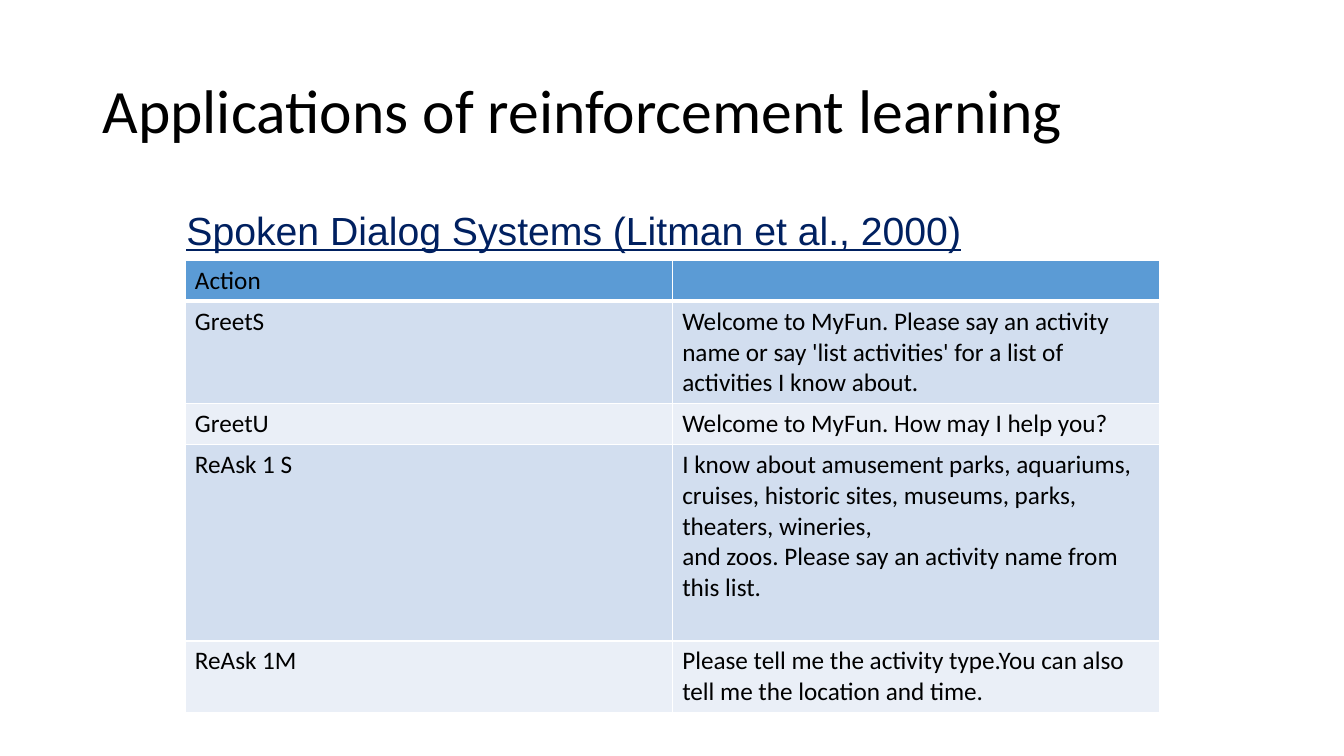
from dataclasses import dataclass

from lxml import etree
from pptx import Presentation
from pptx.dml.color import RGBColor
from pptx.enum.text import MSO_ANCHOR, MSO_AUTO_SIZE, PP_ALIGN
from pptx.oxml.ns import qn
from pptx.util import Cm, Pt

LEFT = PP_ALIGN.LEFT
MIDDLE = MSO_ANCHOR.MIDDLE
NO_FIT = MSO_AUTO_SIZE.NONE
GROW = MSO_AUTO_SIZE.SHAPE_TO_FIT_TEXT
TITLE_ONLY = 5


@dataclass(frozen=True)
class Theme:
    ink: str = "000000"
    navy: str = "002060"
    border: str = "FFFFFF"
    header: str = "5B9BD5"
    bands: tuple = ("D2DEEF", "EAEFF7")
    body_font: str = "Calibri"
    heading_font: str = "Arial"
    title_size: int = 44
    heading_size: int = 28
    body_size: int = 18


THEME = Theme()

ACTIONS = [
    ("Action", "", 1.03),
    ("GreetS", "Welcome to MyFun. Please say an activity name or say "
               "'list activities' for a list of activities I know about.", 2.57),
    ("GreetU", "Welcome to MyFun. How may I help you?", 1.03),
    ("ReAsk 1 S", "I know about amusement parks, aquariums, cruises, historic sites, "
                  "museums, parks, theaters, wineries,\n"
                  "and zoos. Please say an activity name from this list.", 4.95),
    ("ReAsk 1M", "Please tell me the activity type.You can also tell me "
                 "the location and time.", 1.79),
]


def write_text(tf, text, size=THEME.body_size, font=THEME.body_font,
               color=THEME.ink, underline=None, spacing=None):
    for i, line in enumerate(text.split("\n")):
        p = tf.add_paragraph() if i else tf.paragraphs[0]
        p.alignment = LEFT
        p.line_spacing = spacing
        if not line:
            continue
        r = p.add_run()
        r.text = line
        r.font.size = Pt(size)
        r.font.name = font
        r.font.bold = False
        r.font.underline = underline
        r.font.color.rgb = RGBColor.from_string(color)


def add_title(slide, text):
    sp = slide.shapes.title
    sp.left, sp.top, sp.width, sp.height = Cm(2.33), Cm(1.01), Cm(29.21), Cm(3.68)
    tf = sp.text_frame
    tf.vertical_anchor = MIDDLE
    tf.auto_size = NO_FIT
    write_text(tf, text, size=THEME.title_size, spacing=0.9)


def add_heading(slide, text):
    sp = slide.shapes.add_textbox(Cm(4.45), Cm(5.08), Cm(23.92), Cm(1.47))
    tf = sp.text_frame
    tf.word_wrap = True
    tf.auto_size = GROW
    write_text(tf, text, size=THEME.heading_size, font=THEME.heading_font,
               color=THEME.navy, underline=True)


def set_borders(cell, bottom):
    tc_pr = cell._tc.get_or_add_tcPr()
    for side, width in (("L", 1), ("R", 1), ("T", 1), ("B", bottom)):
        ln = etree.SubElement(tc_pr, qn(f"a:ln{side}"), w=str(Pt(width)))
        fill = etree.SubElement(ln, qn("a:solidFill"))
        etree.SubElement(fill, qn("a:srgbClr"), val=THEME.border)


def add_action_table(slide, rows):
    height = sum(row[-1] for row in rows)
    frame = slide.shapes.add_table(len(rows), 2, Cm(4.66), Cm(6.56), Cm(24.56), Cm(height))
    table = frame.table
    for i, (*texts, row_height) in enumerate(rows):
        table.rows[i].height = Cm(row_height)
        color = THEME.bands[(i - 1) % 2] if i else THEME.header
        for j, text in enumerate(texts):
            cell = table.cell(i, j)
            set_borders(cell, bottom=1 if i else 3)
            cell.fill.solid()
            cell.fill.fore_color.rgb = RGBColor.from_string(color)
            write_text(cell.text_frame, text)


def main():
    prs = Presentation()
    prs.slide_width, prs.slide_height = Cm(33.87), Cm(19.05)
    slide = prs.slides.add_slide(prs.slide_layouts[TITLE_ONLY])
    add_title(slide, "Applications of reinforcement learning")
    add_action_table(slide, ACTIONS)
    add_heading(slide, "Spoken Dialog Systems (Litman et al., 2000)")
    prs.save("out.pptx")


if __name__ == "__main__":
    main()
